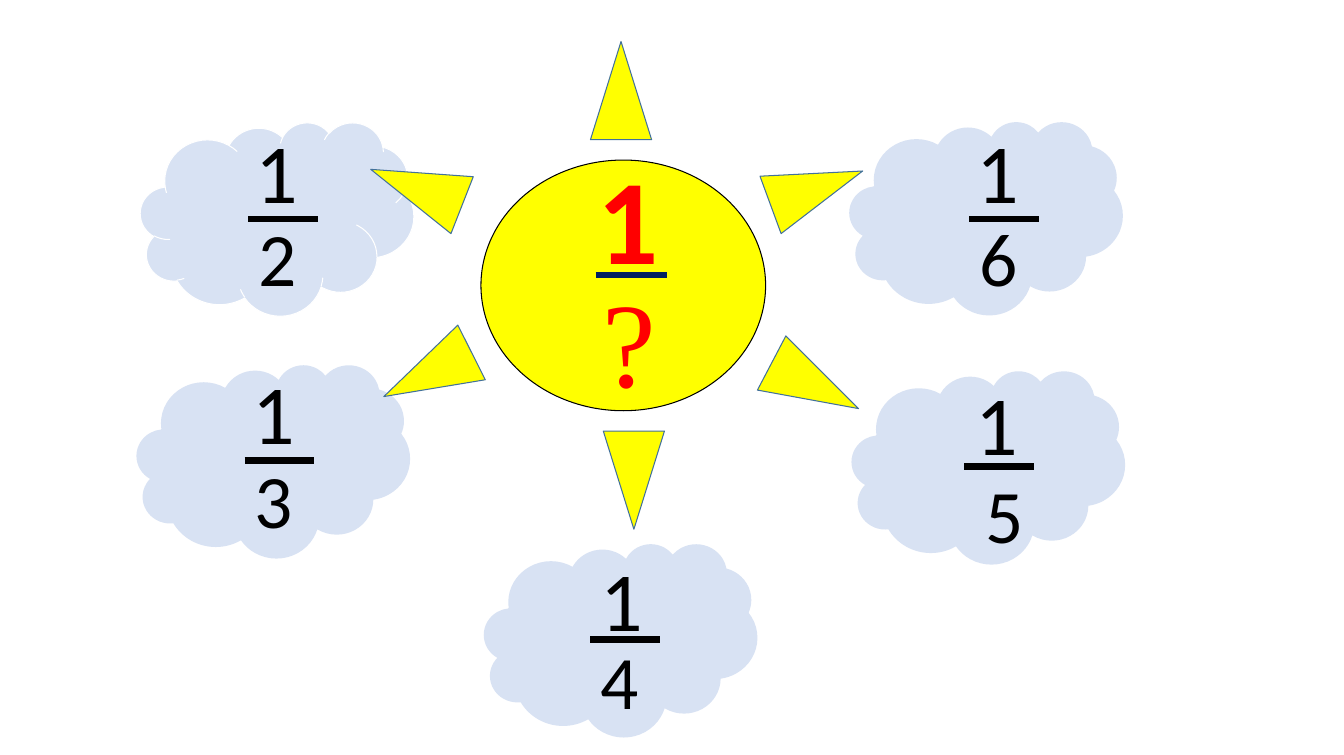
from dataclasses import dataclass
from typing import NamedTuple, Optional

from lxml.etree import SubElement
from pptx import Presentation
from pptx.dml.color import RGBColor
from pptx.enum.shapes import MSO_CONNECTOR, MSO_SHAPE as Preset
from pptx.enum.text import MSO_AUTO_SIZE as AutoSize
from pptx.oxml.ns import qn
from pptx.util import Inches, Pt

# The slide is a grid of 178 columns by 100 rows of square cells
COLUMNS, ROWS = 178, 100
CELL = Inches(0.1)


@dataclass(frozen=True)
class Theme:
    sun: str = "FFFF00"
    outline: str = "000000"
    ray_line: str = "42719B"
    cloud: str = "D8E2F3"
    cloud_line: str = "FFFFFF"
    text: str = "000000"
    accent: str = "FF0000"
    sun_bar: str = "002060"
    font: str = "Calibri"
    question_font: str = "Times New Roman"
    sun_size: int = 115
    numerator_size: int = 80
    denominator_size: int = 72
    thin: int = 1
    thick: int = 6


THEME = Theme()


class Point(NamedTuple):
    column: float
    row: float

    def shifted(self, by: "Point") -> "Point":
        return Point(self.column + by.column, self.row + by.row)


class Size(NamedTuple):
    columns: float
    rows: float


@dataclass(frozen=True)
class CloudFraction:
    denominator: str
    cloud: Point
    bar: Point
    outline: Optional[str] = None
    numerator_shift: Point = Point(0, -13.7)    # from the bar's left end
    denominator_shift: Point = Point(0.3, -1.5)


class Ray(NamedTuple):
    position: Point
    rotation: float


CLOUD_SIZE = Size(36.2, 25.6)
NUMERATOR_SIZE = Size(11.7, 14.5)
DENOMINATOR_SIZE = Size(4.6, 13.1)
SUN_TEXT_SIZE = Size(11.3, 20.4)
RAY_SIZE = Size(8.1, 13)
BAR_LENGTH = 9.2

CLOUDS = [
    CloudFraction("2", Point(18.6, 16.2), Point(32.9, 29), THEME.cloud_line),
    CloudFraction("6", Point(112.5, 16.1), Point(128.4, 29)),
    CloudFraction("3", Point(18.1, 48.3), Point(32.4, 61)),
    CloudFraction("5", Point(112.8, 49.1), Point(127.7, 61.8),
                  numerator_shift=Point(0.5, -13.1), denominator_shift=Point(1.8, -0.3)),
    CloudFraction("4", Point(64.1, 72), Point(78.2, 84.7),
                  numerator_shift=Point(0.4, -12.7), denominator_shift=Point(0.4, -1.2)),
]

RAYS = [
    Ray(Point(104.1, 18.4), 69.8),
    Ray(Point(103.9, 44.6), 117.7),
    Ray(Point(51.1, 18.3), 291.4),
    Ray(Point(52.6, 43.1), 243.3),
    Ray(Point(79.9, 57.1), 180),
    Ray(Point(78.2, 5.5), 0),
]


def cells(*counts: float) -> list[int]:
    return [round(count * CELL) for count in counts]


def add_preset(slide, preset, position: Point, size: Size, fill: str,
               outline: Optional[str] = None, rotation: float = 0) -> None:
    shape = slide.shapes.add_shape(preset, *cells(*position, *size))
    shape.shadow.inherit = False
    shape.rotation = rotation
    shape.fill.solid()
    shape.fill.fore_color.rgb = RGBColor.from_string(fill)
    if outline:
        shape.line.color.rgb = RGBColor.from_string(outline)
        shape.line.width = Pt(THEME.thin)
    else:
        shape.line.fill.background()


def add_text(slide, text: str, position: Point, size: Size, *, points: int,
             font: str = THEME.font, color: str = THEME.text, bold: bool = False) -> None:
    frame = slide.shapes.add_textbox(*cells(*position, *size)).text_frame
    frame.word_wrap = True
    frame.auto_size = AutoSize.SHAPE_TO_FIT_TEXT
    run = frame.paragraphs[0].add_run()
    run.text = text
    run.font.name = font
    run.font.size = Pt(points)
    run.font.bold = bold
    run.font.color.rgb = RGBColor.from_string(color)


def add_bar(slide, start: Point, length: float, color: str) -> None:
    end = start.shifted(Point(length, 0))
    bar = slide.shapes.add_connector(MSO_CONNECTOR.STRAIGHT, *cells(*start, *end))
    bar.line.color.rgb = RGBColor.from_string(color)
    bar.line.width = Pt(THEME.thick)
    SubElement(bar._element.spPr, qn("a:effectLst"))


def add_sun(slide) -> None:
    add_preset(slide, Preset.OVAL, Point(63.7, 21.2), Size(37.7, 33.2), THEME.sun, THEME.outline)
    add_text(slide, "1", Point(78.2, 18.6), SUN_TEXT_SIZE,
             points=THEME.sun_size, color=THEME.accent, bold=True)
    add_bar(slide, Point(78.9, 36.4), 9.4, THEME.sun_bar)
    add_text(slide, "?", Point(78.8, 34.8), SUN_TEXT_SIZE,
             points=THEME.sun_size, font=THEME.question_font, color=THEME.accent)


def add_cloud(slide, item: CloudFraction) -> None:
    add_preset(slide, Preset.CLOUD, item.cloud, CLOUD_SIZE, THEME.cloud, item.outline)
    add_text(slide, "1", item.bar.shifted(item.numerator_shift), NUMERATOR_SIZE,
             points=THEME.numerator_size)
    add_bar(slide, item.bar, BAR_LENGTH, THEME.text)
    add_text(slide, item.denominator, item.bar.shifted(item.denominator_shift),
             DENOMINATOR_SIZE, points=THEME.denominator_size)


def main() -> None:
    presentation = Presentation()
    presentation.slide_width, presentation.slide_height = cells(COLUMNS, ROWS)
    slide = presentation.slides.add_slide(presentation.slide_layouts[6])

    # Sun in the middle, fractions on the clouds around it
    add_sun(slide)
    for item in CLOUDS:
        add_cloud(slide, item)

    # Rays lie over the clouds
    for ray in RAYS:
        add_preset(slide, Preset.ISOSCELES_TRIANGLE, ray.position, RAY_SIZE,
                   THEME.sun, THEME.ray_line, ray.rotation)

    presentation.save("out.pptx")


if __name__ == "__main__":
    main()
